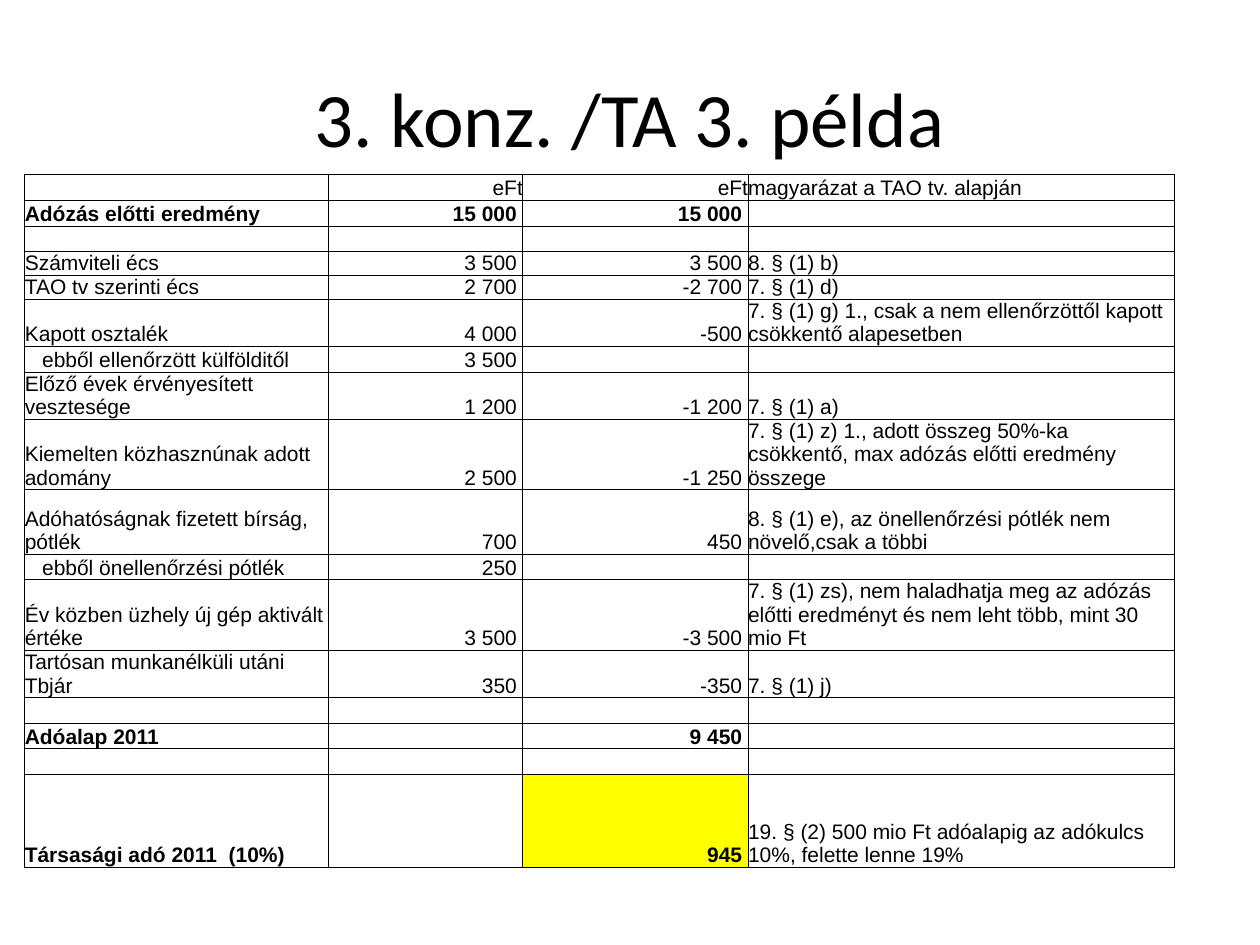
from dataclasses import dataclass

from lxml import etree
from pptx import Presentation
from pptx.dml.color import RGBColor
from pptx.enum.text import MSO_ANCHOR, PP_ALIGN
from pptx.oxml.ns import qn
from pptx.util import Cm, Pt

LEFT, RIGHT, CENTER = PP_ALIGN.LEFT, PP_ALIGN.RIGHT, PP_ALIGN.CENTER
MIDDLE, BOTTOM = MSO_ANCHOR.MIDDLE, MSO_ANCHOR.BOTTOM


@dataclass(frozen=True)
class Theme:
    ink: str = "000000"
    mark: str = "FFFF00"
    head: str = "Calibri"
    body: str = "Arial"
    big: int = 44
    small: int = 12
    rule: float = 0.5


THEME = Theme()
TITLE = "3. konz. /TA 3. példa"
WIDTHS = (6.12, 3.92, 4.54, 8.6)
ONE, TWO, THREE = 0.48, 0.95, 1.42
BLANK = (ONE, "", "", "", "")
SUB = "ebből"
TOTALS = ("Adózás előtti eredmény", "Adóalap 2011", "Társasági adó 2011  (10%)")
# Row height, label, amount, tax base effect, legal note
ROWS = (
    (ONE, "", "eFt", "eFt", "magyarázat a TAO tv. alapján"),
    (ONE, TOTALS[0], "15 000", "15 000", ""),
    BLANK,
    (ONE, "Számviteli écs", "3 500", "3 500", "8. § (1) b)"),
    (ONE, "TAO tv szerinti écs", "2 700", "-2 700", "7. § (1) d)"),
    (TWO, "Kapott osztalék", "4 000", "-500",
     "7. § (1) g) 1., csak a nem ellenőrzöttől kapott csökkentő alapesetben"),
    (ONE, "ebből ellenőrzött külfölditől", "3 500", "", ""),
    (TWO, "Előző évek érvényesített vesztesége", "1 200", "-1 200", "7. § (1) a)"),
    (THREE, "Kiemelten közhasznúnak adott adomány", "2 500", "-1 250",
     "7. § (1) z) 1., adott összeg 50%-ka csökkentő, max adózás előtti eredmény összege"),
    (1.3, "Adóhatóságnak fizetett bírság, pótlék", "700", "450",
     "8. § (1) e), az önellenőrzési pótlék nem növelő,csak a többi"),
    (ONE, "ebből önellenőrzési pótlék", "250", "", ""),
    (THREE, "Év közben üzhely új gép aktivált értéke", "3 500", "-3 500",
     "7. § (1) zs), nem haladhatja meg az adózás előtti eredményt és nem leht több, "
     "mint 30 mio Ft"),
    (TWO, "Tartósan munkanélküli utáni Tbjár", "350", "-350", "7. § (1) j)"),
    BLANK,
    (ONE, TOTALS[1], "", "9 450", ""),
    BLANK,
    (1.87, TOTALS[2], "", "945",
     "19. § (2) 500 mio Ft adóalapig az adókulcs 10%, felette lenne 19%"),
)


def style(para, face, size, bold=False):
    for run in para.runs:
        font = run.font
        font.name, font.size, font.bold = face, Pt(size), bold
        font.color.rgb = RGBColor.from_string(THEME.ink)


def add_title(slide):
    title = slide.shapes.title
    title.left, title.top = Cm(1.27), Cm(0.76)
    title.width, title.height = Cm(22.86), Cm(3.18)
    frame = title.text_frame
    frame.text = TITLE
    frame.vertical_anchor = MIDDLE
    para = frame.paragraphs[0]
    para.alignment = CENTER
    style(para, THEME.head, THEME.big)


def add_rules(cell):
    """Draw a thin line on all four sides; must run before the fill is set."""
    props = cell._tc.get_or_add_tcPr()
    for side in ("a:lnL", "a:lnR", "a:lnT", "a:lnB"):
        line = etree.SubElement(props, qn(side), w=str(Pt(THEME.rule)))
        fill = etree.SubElement(line, qn("a:solidFill"))
        etree.SubElement(fill, qn("a:srgbClr"), val=THEME.ink)


def fill_cell(cell, text, col, bold):
    number = col in (1, 2)
    cell.margin_left = Cm(0.35 if text.startswith(SUB) else 0)
    cell.margin_right = Cm(0.12 if number and text != "eFt" else 0)
    cell.margin_top = cell.margin_bottom = 0
    cell.vertical_anchor = BOTTOM
    add_rules(cell)
    cell.fill.background()
    cell.text_frame.text = text
    para = cell.text_frame.paragraphs[0]
    para.alignment = RIGHT if number else LEFT
    style(para, THEME.body, THEME.small, bold)
    if not text:  # keeps an empty row as low as a line of text
        para._p.get_or_add_endParaRPr().set("sz", str(THEME.small * 100))


def add_grid(slide):
    wide, high = sum(WIDTHS), sum(row[0] for row in ROWS)
    frame = slide.shapes.add_table(
        len(ROWS), len(WIDTHS), Cm(0.5), Cm(3.52), Cm(wide), Cm(high))
    table = frame.table
    table.first_row = table.horz_banding = False
    for col, width in zip(table.columns, WIDTHS):
        col.width = Cm(width)
    for r, (height, *texts) in enumerate(ROWS):
        table.rows[r].height = Cm(height)
        for c, text in enumerate(texts):
            fill_cell(table.cell(r, c), text, c, texts[0] in TOTALS and c < 3)
    tax = table.cell(len(ROWS) - 1, 2)
    tax.fill.solid()
    tax.fill.fore_color.rgb = RGBColor.from_string(THEME.mark)


def main():
    deck = Presentation()
    deck.slide_width, deck.slide_height = Cm(25.4), Cm(19.05)
    slide = deck.slides.add_slide(deck.slide_layouts[5])
    add_title(slide)
    add_grid(slide)
    deck.save("out.pptx")


if __name__ == "__main__":
    main()
